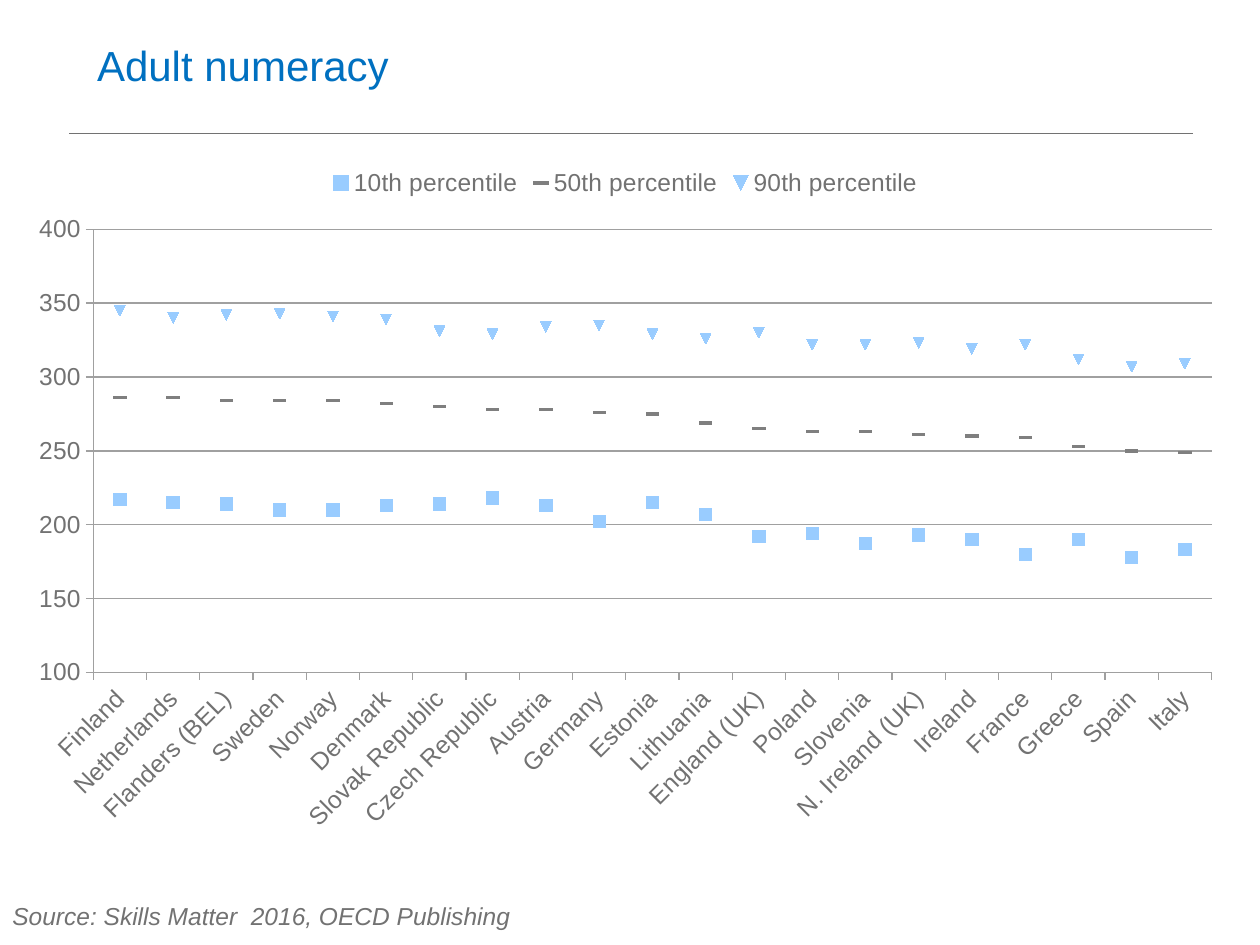
from typing import NamedTuple

from lxml.etree import SubElement
from pptx import Presentation
from pptx.chart.data import CategoryChartData
from pptx.dml.color import RGBColor
from pptx.enum.chart import XL_CHART_TYPE, XL_LEGEND_POSITION, XL_MARKER_STYLE, XL_TICK_MARK
from pptx.enum.shapes import MSO_CONNECTOR
from pptx.enum.text import MSO_ANCHOR, PP_ALIGN
from pptx.oxml import parse_xml
from pptx.oxml.ns import nsdecls, qn
from pptx.util import Inches, Pt

COLORS = {"title": "0070C0", "gray": "727272", "grid": "A0A0A0",
          "light_blue": "99CCFF", "dash": "7F7F7F"}
FONT = "Arial"
COUNTRIES = ["Finland", "Netherlands", "Flanders (BEL)", "Sweden", "Norway", "Denmark",
             "Slovak Republic", "Czech Republic", "Austria", "Germany", "Estonia",
             "Lithuania", "England (UK)", "Poland", "Slovenia", "N. Ireland (UK)",
             "Ireland", "France", "Greece", "Spain", "Italy"]


class Percentile(NamedTuple):
    name: str
    scores: list[int]
    color: str
    marker: XL_MARKER_STYLE
    size: int


PERCENTILES = [
    Percentile("10th percentile",
               [217, 215, 214, 210, 210, 213, 214, 218, 213, 202, 215,
                207, 192, 194, 187, 193, 190, 180, 190, 178, 183],
               "light_blue", XL_MARKER_STYLE.SQUARE, 7),
    Percentile("50th percentile",
               [286, 286, 284, 284, 284, 282, 280, 278, 278, 276, 275,
                269, 265, 263, 263, 261, 260, 259, 253, 250, 249],
               "dash", XL_MARKER_STYLE.DASH, 7),
    Percentile("90th percentile",
               [345, 340, 342, 343, 341, 339, 331, 329, 334, 335, 329,
                326, 330, 322, 322, 323, 319, 322, 312, 307, 309],
               "light_blue", XL_MARKER_STYLE.AUTOMATIC, 6),
]


def rgb(name: str) -> RGBColor:
    return RGBColor.from_string(COLORS[name])


def write_text(shape, text: str, *, size: int, color: str, italic: bool = False,
               anchor: MSO_ANCHOR = MSO_ANCHOR.TOP) -> None:
    frame = shape.text_frame
    frame.word_wrap = True
    frame.vertical_anchor = anchor
    paragraph = frame.paragraphs[0]
    paragraph.alignment = PP_ALIGN.LEFT
    run = paragraph.add_run()
    run.text = text
    run.font.name = FONT
    run.font.size = Pt(size)
    run.font.italic = italic
    run.font.color.rgb = rgb(color)


def style_line(line, color: str, width: float = 0.75) -> None:
    line.color.rgb = rgb(color)
    line.width = Pt(width)


def place_plot(chart, x: float, y: float, w: float, h: float) -> None:
    """Fix the inner plot area, in fractions of the chart."""
    plot_area = chart._chartSpace.chart.plotArea
    for old in plot_area.findall(qn("c:layout")):
        plot_area.remove(old)
    plot_area.insert(0, parse_xml(
        f'<c:layout {nsdecls("c")}><c:manualLayout><c:layoutTarget val="inner"/>'
        '<c:xMode val="edge"/><c:yMode val="edge"/>'
        f'<c:x val="{x}"/><c:y val="{y}"/><c:w val="{w}"/><c:h val="{h}"/>'
        '</c:manualLayout></c:layout>'))


def style_axes(chart) -> None:
    scores, countries = chart.value_axis, chart.category_axis
    for axis in (scores, countries):
        axis.major_tick_mark = XL_TICK_MARK.OUTSIDE
        axis.minor_tick_mark = XL_TICK_MARK.NONE
        style_line(axis.format.line, "grid")
        axis.tick_labels.font.size = Pt(14)
    scores.minimum_scale, scores.maximum_scale, scores.major_unit = 100, 400, 50
    scores.tick_labels.number_format = "0"
    scores.tick_labels.number_format_is_linked = False
    scores.has_major_gridlines = True
    style_line(scores.major_gridlines.format.line, "grid")
    countries._element.txPr.bodyPr.set("rot", "-2700000")


def add_percentile_chart(slide) -> None:
    data = CategoryChartData(number_format="0")
    data.categories = COUNTRIES
    for percentile in PERCENTILES:
        data.add_series(percentile.name, percentile.scores)
    chart = slide.shapes.add_chart(
        XL_CHART_TYPE.LINE_MARKERS, Inches(0.12), Inches(1.23),
        Inches(9.69), Inches(5.47), data).chart
    chart.has_title = False
    chart.font.name, chart.font.size = FONT, Pt(14)
    chart.font.color.rgb = rgb("gray")
    chart.has_legend = True
    chart.legend.position = XL_LEGEND_POSITION.TOP
    chart.legend.include_in_layout = False
    chart.plots[0].vary_by_categories = False
    for series, percentile in zip(chart.plots[0].series, PERCENTILES):
        series.smooth = False
        series.format.line.fill.background()
        marker = series.marker
        marker.style, marker.size = percentile.marker, percentile.size
        marker.format.fill.solid()
        marker.format.fill.fore_color.rgb = rgb(percentile.color)
        marker.format.line.fill.background()
    style_axes(chart)
    place_plot(chart, 0.064, 0.108, 0.916, 0.643)


def main() -> None:
    presentation = Presentation()
    presentation.slide_width, presentation.slide_height = Inches(10), Inches(7.5)
    slide = presentation.slides.add_slide(presentation.slide_layouts[5])

    title = slide.shapes.title
    title.left, title.top = Inches(0.67), Inches(0.02)
    title.width, title.height = Inches(8.82), Inches(0.99)
    write_text(title, "Adult numeracy", size=24, color="title", anchor=MSO_ANCHOR.MIDDLE)

    divider = slide.shapes.add_connector(
        MSO_CONNECTOR.STRAIGHT, Inches(0.55), Inches(1.06), Inches(9.47), Inches(1.06))
    style_line(divider.line, "gray", 1)
    SubElement(divider._element.spPr, qn("a:effectLst"))

    add_percentile_chart(slide)

    source = slide.shapes.add_textbox(Inches(0), Inches(7.1), Inches(6.3), Inches(0.34))
    write_text(source, "Source: Skills Matter  2016, OECD Publishing",
               size=14, color="gray", italic=True)
    presentation.save("out.pptx")


if __name__ == "__main__":
    main()
